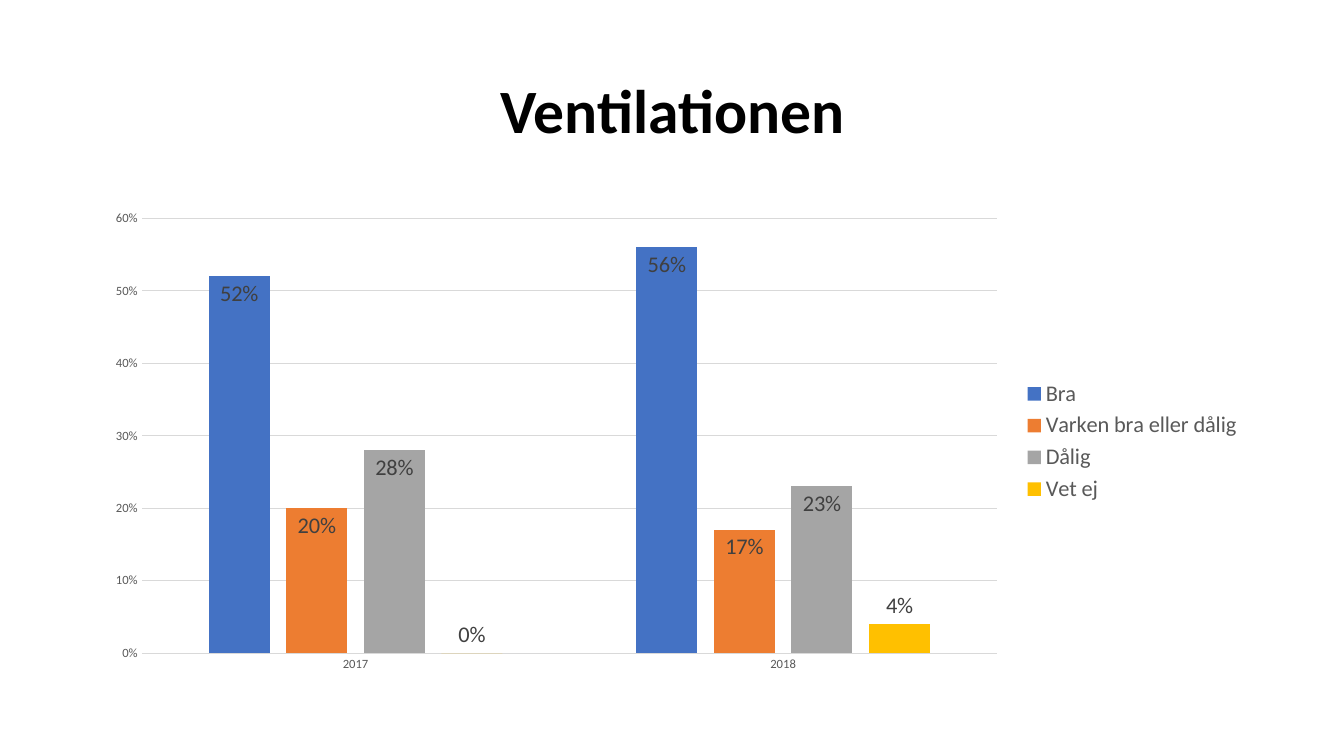
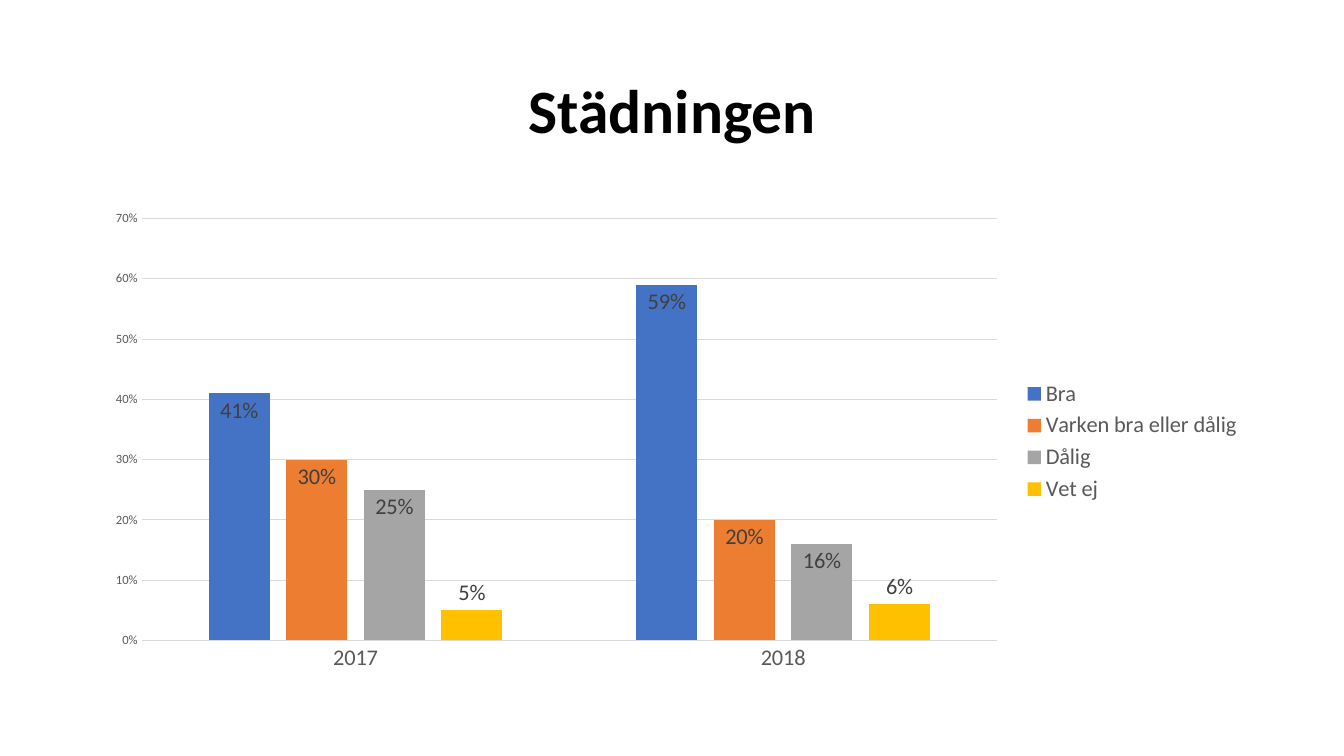
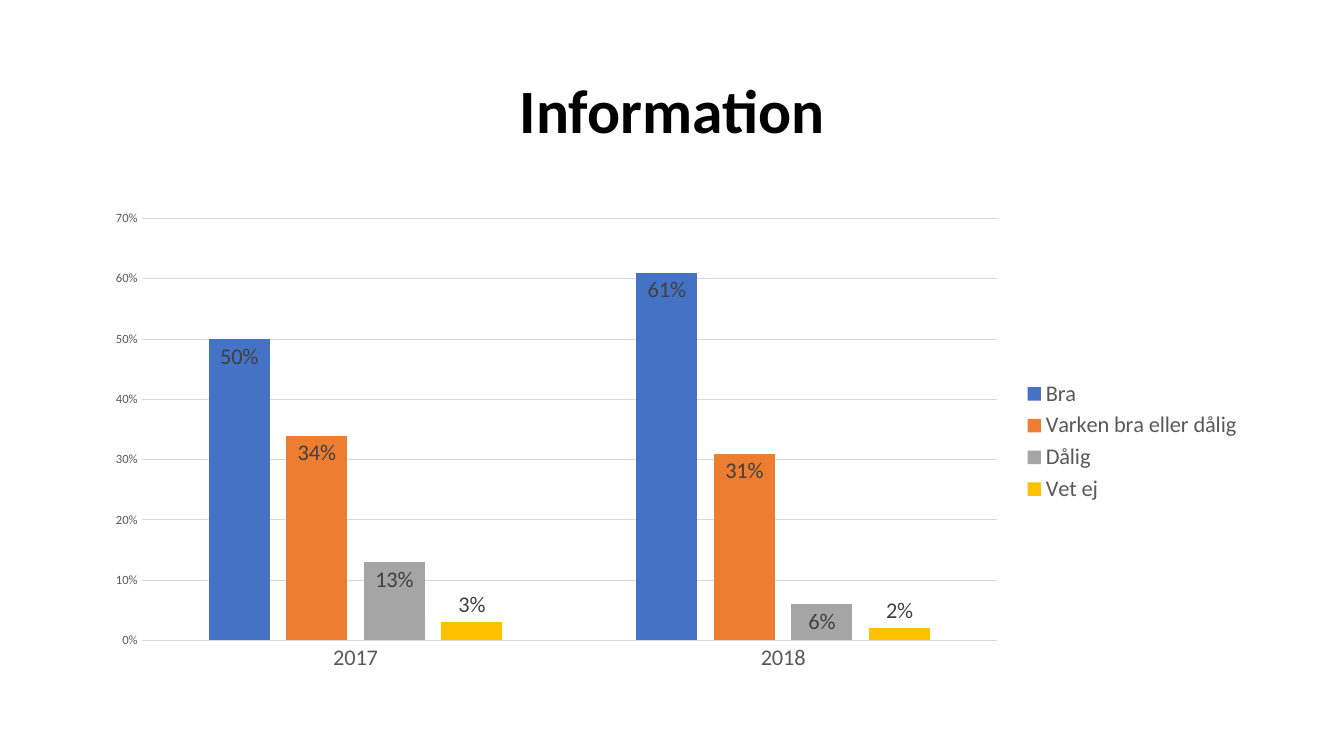
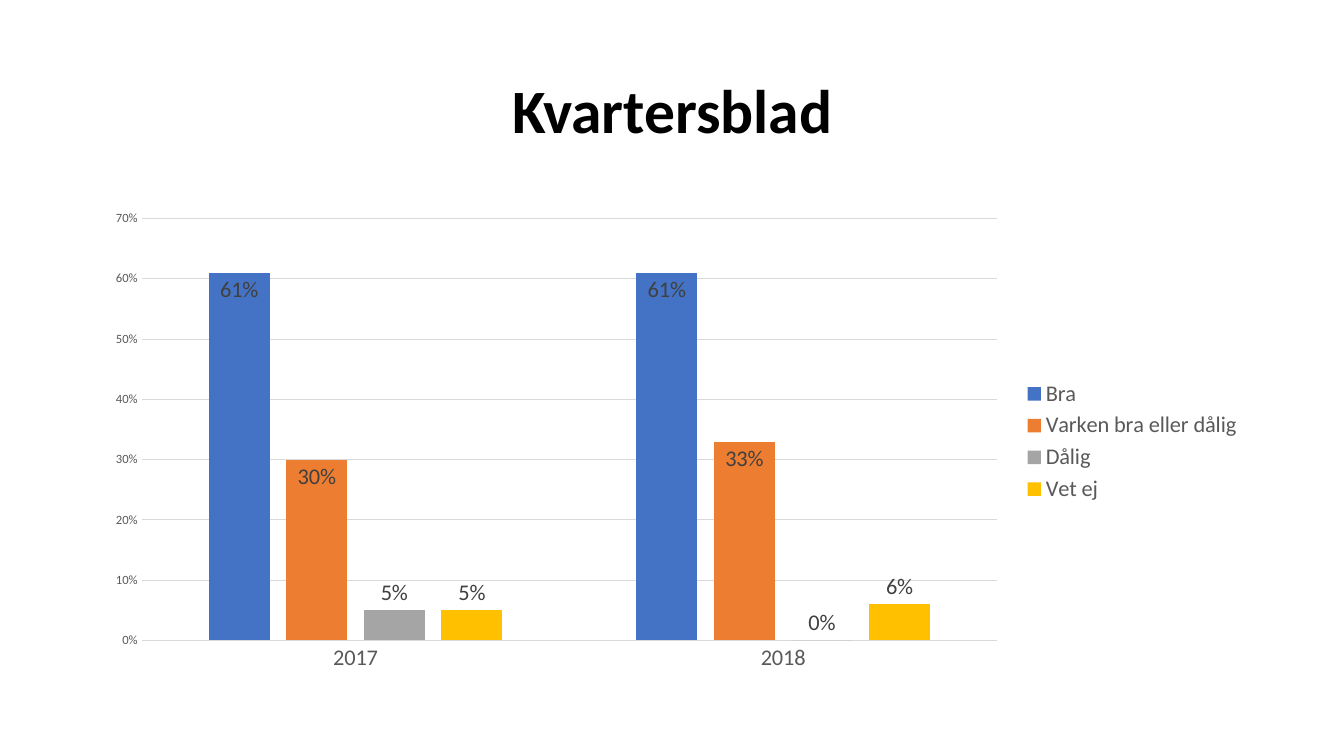
from dataclasses import dataclass

from pptx import Presentation
from pptx.chart.data import CategoryChartData as ChartData
from pptx.dml.color import RGBColor
from pptx.enum.chart import XL_CHART_TYPE as Kind
from pptx.enum.chart import XL_LABEL_POSITION as Pos
from pptx.enum.chart import XL_LEGEND_POSITION as Side
from pptx.enum.chart import XL_TICK_MARK as Tick
from pptx.enum.text import MSO_ANCHOR as Anchor
from pptx.enum.text import PP_ALIGN as Align
from pptx.slide import Slide
from pptx.text.text import Font, TextFrame
from pptx.util import Inches, Pt

# Shared style
FACE = "Calibri"
BLACK = RGBColor(0x00, 0x00, 0x00)
DARK = RGBColor(0x40, 0x40, 0x40)
GREY = RGBColor(0x59, 0x59, 0x59)
PALE = RGBColor(0xD9, 0xD9, 0xD9)
BLUE = RGBColor(0x44, 0x72, 0xC4)
ORANGE = RGBColor(0xED, 0x7D, 0x31)
SILVER = RGBColor(0xA5, 0xA5, 0xA5)
GOLD = RGBColor(0xFF, 0xC0, 0x00)

LEFT, WIDTH = Inches(0.92), Inches(11.5)
YEARS = ("2017", "2018")


@dataclass(frozen=True)
class Answer:
    name: str
    color: RGBColor


@dataclass(frozen=True)
class Topic:
    title: str
    rows: tuple[tuple[float, float], ...]  # one row per answer, one value per year
    top: float  # end of the value axis
    outer: int = 1  # how many of the last answers have labels above the bars
    size: int = 16  # year labels


ANSWERS = (
    Answer("Bra", BLUE),
    Answer("Varken bra eller dålig", ORANGE),
    Answer("Dålig", SILVER),
    Answer("Vet ej", GOLD),
)

TOPICS = (
    Topic("Ventilationen", ((0.52, 0.56), (0.20, 0.17), (0.28, 0.23), (0, 0.04)), 0.6, size=9),
    Topic("Städningen", ((0.41, 0.59), (0.30, 0.20), (0.25, 0.16), (0.05, 0.06)), 0.7),
    Topic("Information", ((0.50, 0.61), (0.34, 0.31), (0.13, 0.06), (0.03, 0.02)), 0.7),
    Topic("Kvartersblad", ((0.61, 0.61), (0.30, 0.33), (0.05, 0), (0.05, 0.06)), 0.7, outer=2),
)


def style(font: Font, size: float, color: RGBColor, bold: bool = False) -> None:
    font.name, font.size, font.bold = FACE, Pt(size), bold
    font.color.rgb = color


def write(frame: TextFrame, text: str, *, size: float, color: RGBColor = BLACK,
          bold: bool = False, align: Align = Align.CENTER) -> None:
    frame.text = text
    frame.word_wrap = True
    frame.vertical_anchor = Anchor.MIDDLE
    para = frame.paragraphs[0]
    para.alignment, para.line_spacing = align, 0.9
    style(para.runs[0].font, size, color, bold)


def add_title(slide: Slide, text: str) -> None:
    title = slide.shapes.title
    title.left, title.top = LEFT, Inches(0.4)
    title.width, title.height = WIDTH, Inches(1.45)
    write(title.text_frame, text, size=44, bold=True)


def add_bars(slide: Slide, topic: Topic) -> None:
    data = ChartData(number_format="0%")
    data.categories = YEARS
    for answer, row in zip(ANSWERS, topic.rows):
        data.add_series(answer.name, row)
    chart = slide.shapes.add_chart(
        Kind.COLUMN_CLUSTERED, LEFT, Inches(2), WIDTH, Inches(4.76), data).chart
    chart.has_title = False
    style(chart.font, 10, BLACK)

    # Legend
    chart.has_legend = True
    chart.legend.position = Side.RIGHT
    chart.legend.include_in_layout = False
    style(chart.legend.font, 16, GREY)

    # Axes
    years, scale = chart.category_axis, chart.value_axis
    for axis, size in ((years, topic.size), (scale, 9)):
        axis.major_tick_mark = axis.minor_tick_mark = Tick.NONE
        style(axis.tick_labels.font, size, GREY)
    scale.minimum_scale, scale.maximum_scale, scale.major_unit = 0, topic.top, 0.1
    scale.tick_labels.number_format = "0%"
    scale.tick_labels.number_format_is_linked = False
    scale.format.line.fill.background()
    scale.has_major_gridlines = True
    for line in (years.format.line, scale.major_gridlines.format.line):
        line.color.rgb, line.width = PALE, Pt(0.75)

    # Bars and their labels
    plot = chart.plots[0]
    plot.gap_width, plot.overlap, plot.vary_by_categories = 219, -27, False
    inner = len(ANSWERS) - topic.outer
    for i, (answer, bars) in enumerate(zip(ANSWERS, plot.series)):
        bars.format.fill.solid()
        bars.format.fill.fore_color.rgb = answer.color
        bars.invert_if_negative = False
        labels = bars.data_labels
        labels.show_value = True
        labels.number_format, labels.number_format_is_linked = "0%", False
        labels.position = Pos.INSIDE_END if i < inner else Pos.OUTSIDE_END
        style(labels.font, 16, DARK)


def main() -> None:
    deck = Presentation()
    deck.slide_width, deck.slide_height = Inches(13.33), Inches(7.5)
    layout = deck.slide_layouts.get_by_name("Title Only")
    for topic in TOPICS:
        slide = deck.slides.add_slide(layout)
        add_title(slide, topic.title)
        add_bars(slide, topic)
    deck.save("out.pptx")


if __name__ == "__main__":
    main()
